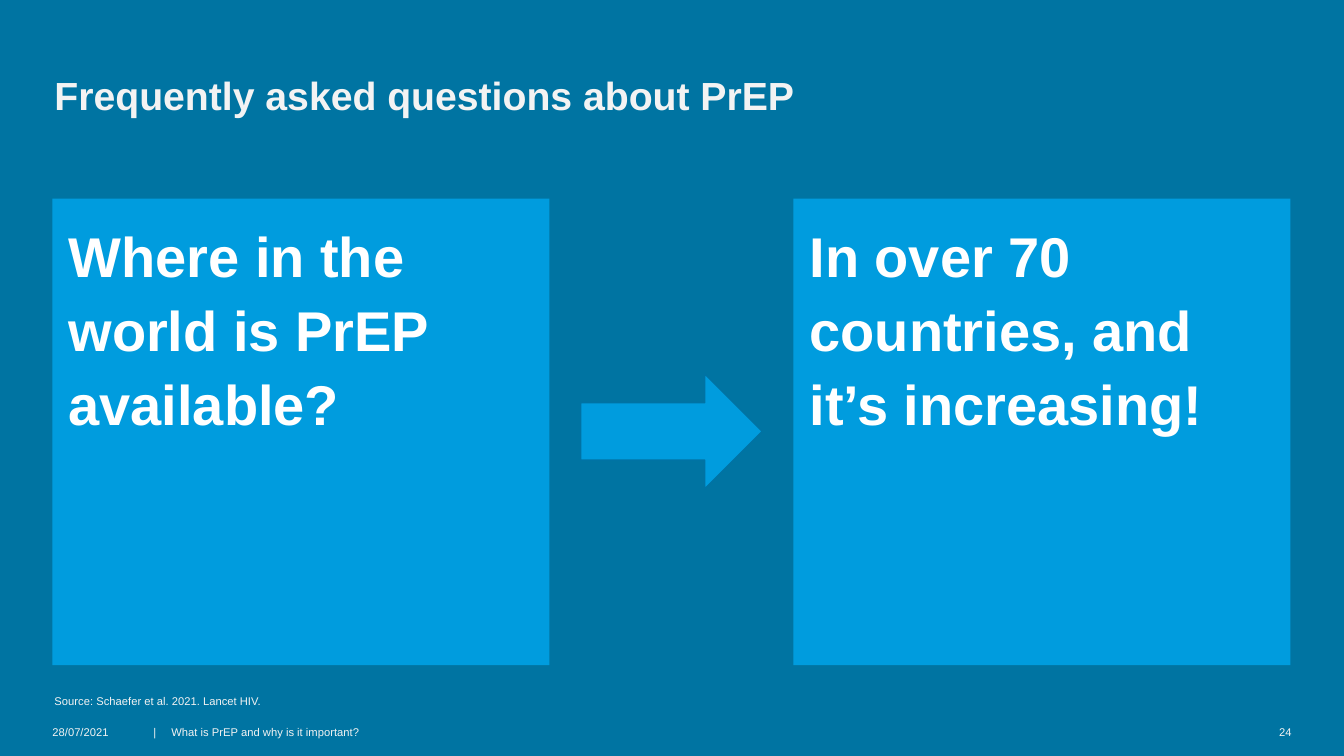
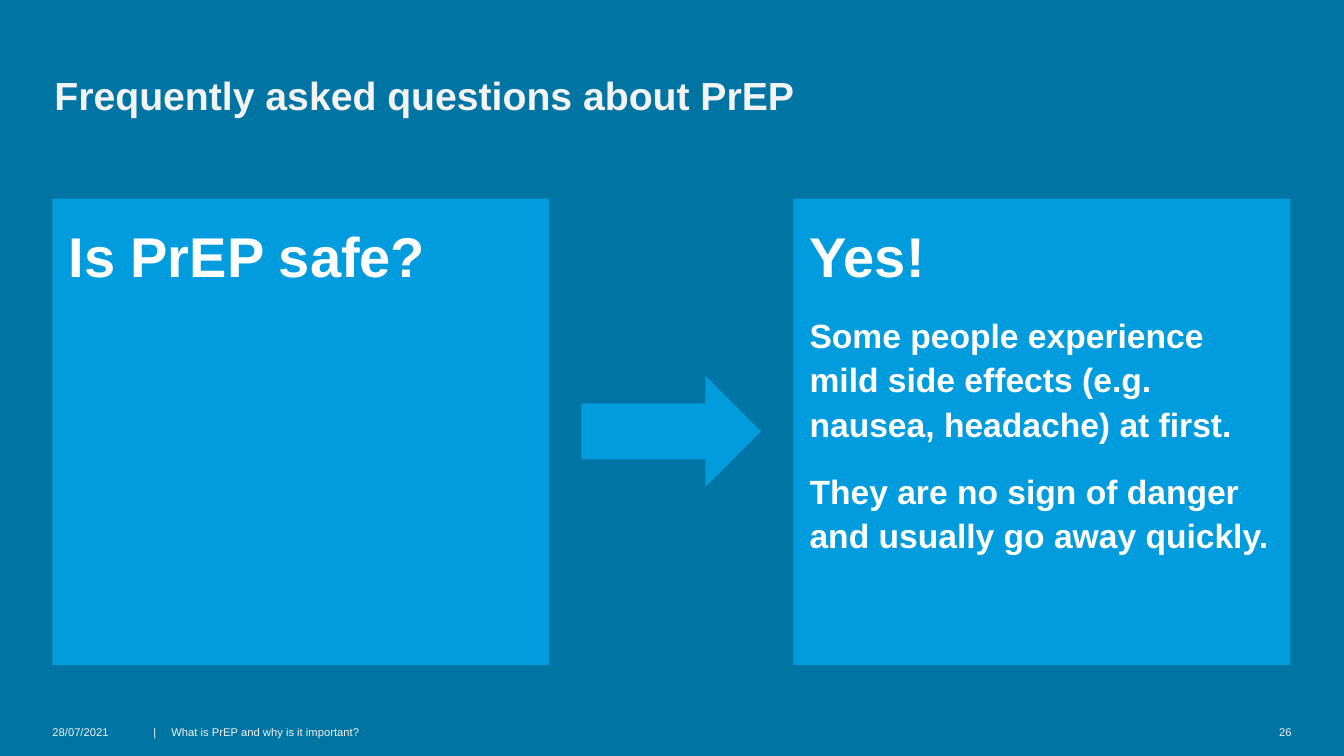
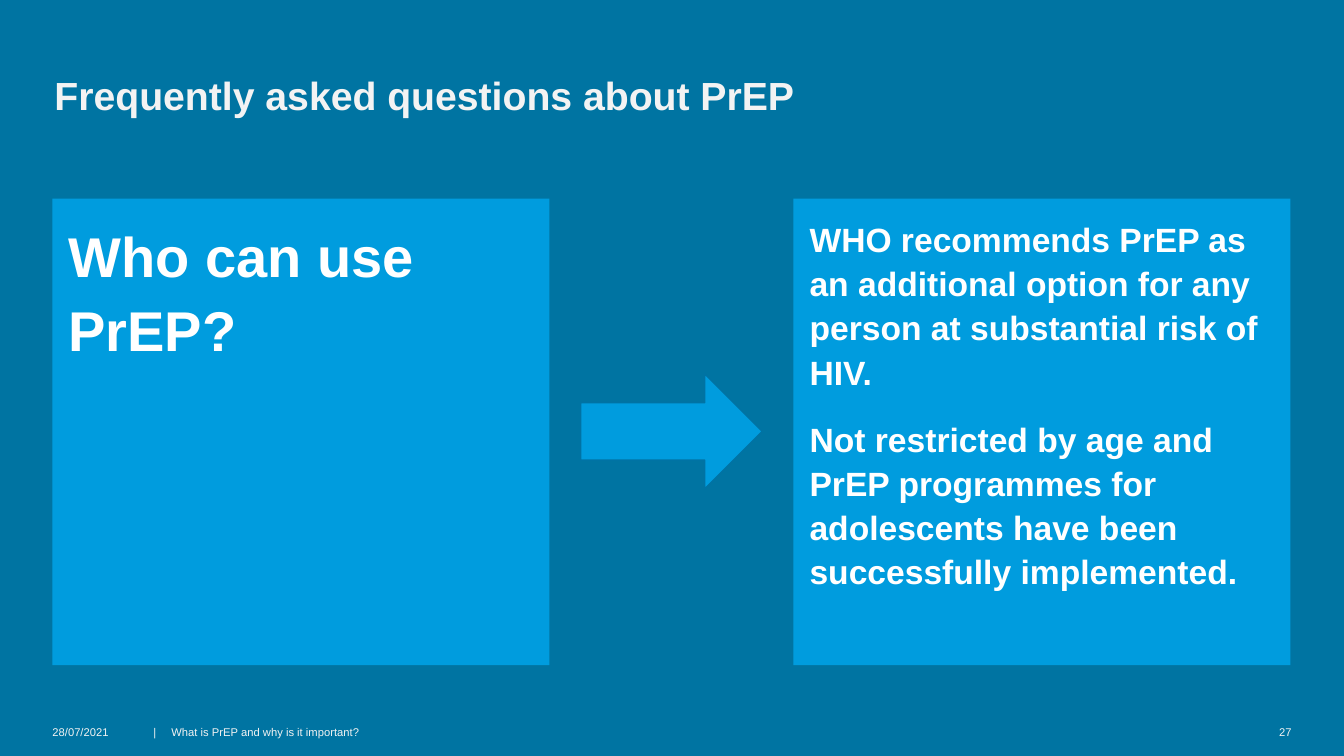
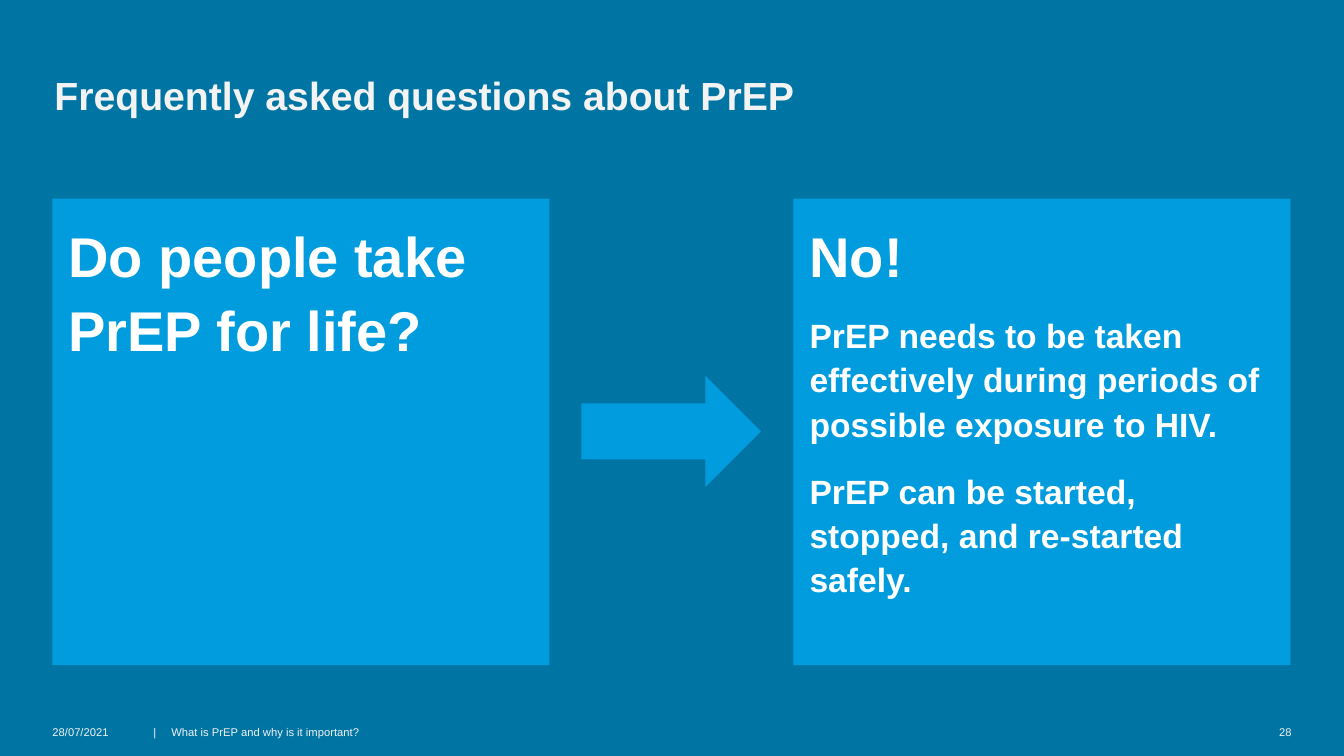
from dataclasses import dataclass
from typing import NamedTuple

from lxml import etree
from pptx import Presentation
from pptx.dml.color import RGBColor
from pptx.enum.shapes import MSO_SHAPE
from pptx.enum.text import MSO_ANCHOR, MSO_AUTO_SIZE, PP_ALIGN
from pptx.oxml.ns import qn
from pptx.util import Emu, Pt

RECT, ARROW = MSO_SHAPE.RECTANGLE, MSO_SHAPE.RIGHT_ARROW
TOP, BOTTOM = MSO_ANCHOR.TOP, MSO_ANCHOR.BOTTOM
LEFT, RIGHT = PP_ALIGN.LEFT, PP_ALIGN.RIGHT
NO_FIT = MSO_AUTO_SIZE.NONE
SCALE = 9144  # EMU in one px, 100 px to the inch


# Theme and geometry
@dataclass(frozen=True)
class Theme:
    font: str = "Arial"
    back: str = "0074A2"
    panel: str = "009CDE"
    edge: str = "0073A4"
    white: str = "FFFFFF"
    pale: str = "F3F3F3"
    title: int = 28
    big: int = 40
    mid: int = 24
    small: int = 8


class Box(NamedTuple):
    left: int
    top: int
    width: int
    height: int


class Line(NamedTuple):
    text: str
    size: int


@dataclass(frozen=True)
class Card:
    page: int
    ask: str
    reply: tuple[Line, ...]
    source: str = ""


THEME = Theme()
WIDTH, HEIGHT = 1333, 750
EDGE, SPAN, PAD = 52, 1228, 16
SIDE, GAP = 493, 31
ASK = Box(EDGE, 197, SIDE, 463)
REPLY = ASK._replace(left=EDGE + SPAN - SIDE)
POINT = Box(EDGE + SIDE + GAP, 371, SPAN - 2 * (SIDE + GAP), 114)
HEAD = Box(EDGE, 39, 892, 79)
SOURCE = Box(EDGE, 688, SPAN, 23)
DATE = Box(EDGE, 720, 86, 20)
TOPIC = DATE._replace(left=152, width=248)
PAGE = DATE._replace(left=1249, width=32)

# Wording
TITLE = "Frequently asked questions about PrEP"
CARDS = (
    Card(24, "Where in the world is PrEP available?",
         (Line("In over 70 countries, and it’s increasing!", THEME.big),),
         "Source: Schaefer et al. 2021. Lancet HIV."),
    Card(26, "Is PrEP safe?",
         (Line("Yes!", THEME.big),
          Line("Some people experience mild side effects (e.g. nausea, "
               "headache) at first.", THEME.mid),
          Line("They are no sign of danger and usually go away quickly.",
               THEME.mid))),
    Card(27, "Who can use PrEP?",
         (Line("WHO recommends PrEP as an additional option for any person "
               "at substantial risk of HIV.", THEME.mid),
          Line("Not restricted by age and PrEP programmes for adolescents "
               "have been successfully implemented.", THEME.mid))),
    Card(28, "Do people take PrEP for life?",
         (Line("No!", THEME.big),
          Line("PrEP needs to be taken effectively during periods of "
               "possible exposure to HIV.", THEME.mid),
          Line("PrEP can be started, stopped, and re-started safely.",
               THEME.mid))),
)


# Helpers
def px(count: int) -> Emu:
    return Emu(count * SCALE)


def place(box: Box) -> list[Emu]:
    return [px(side) for side in box]


def write(shape, lines: tuple[Line, ...], *, color: str = THEME.pale,
          bold: bool = False, align=LEFT, anchor=TOP,
          inset: tuple[int, int, int, int] = (0, 0, 0, 0),
          lead: float = 1.0, before: int = 0, after: int = 0,
          tab: int = 0) -> None:
    """Fill a shape with one paragraph for each line."""
    frame = shape.text_frame
    frame.word_wrap = True
    frame.auto_size = NO_FIT
    frame.vertical_anchor = anchor
    (frame.margin_left, frame.margin_top,
     frame.margin_right, frame.margin_bottom) = map(px, inset)
    for index, line in enumerate(lines):
        para = frame.add_paragraph() if index else frame.paragraphs[0]
        if tab:
            stops = etree.SubElement(para._p.get_or_add_pPr(), qn("a:tabLst"))
            etree.SubElement(stops, qn("a:tab"), pos=str(px(tab)), algn="l")
        para.alignment = align
        para.line_spacing = lead
        para.space_before = Pt(before if index else 0)
        para.space_after = Pt(after)
        run = para.add_run()
        run.text = line.text
        font = run.font
        font.name, font.size, font.bold = THEME.font, Pt(line.size), bold
        font.color.rgb = RGBColor.from_string(color)


def block(slide, kind, box: Box, edge: str = ""):
    shape = slide.shapes.add_shape(kind, *place(box))
    shape.shadow.inherit = False
    shape.fill.solid()
    shape.fill.fore_color.rgb = RGBColor.from_string(THEME.panel)
    if edge:
        shape.line.color.rgb = RGBColor.from_string(edge)
        shape.line.width = Pt(1)
    else:
        shape.line.fill.background()
    return shape


def panel(slide, box: Box, lines: tuple[Line, ...]) -> None:
    write(block(slide, RECT, box), lines, color=THEME.white, bold=True,
          inset=(PAD,) * 4, lead=1.1, before=10, after=6)


def label(slide, box: Box, text: str, **style) -> None:
    write(slide.shapes.add_textbox(*place(box)),
          (Line(text, THEME.small),), **style)


# Slide parts
def header(slide) -> None:
    title = slide.shapes.title
    title.left, title.top, title.width, title.height = place(HEAD)
    write(title, (Line(TITLE, THEME.title),), bold=True, anchor=BOTTOM,
          inset=(2, 0, 39, 0), lead=0.9)


def footer(slide, page: int) -> None:
    label(slide, DATE, "28/07/2021")
    label(slide, TOPIC, "|\tWhat is PrEP and why is it important?", tab=18)
    label(slide, PAGE, str(page), align=RIGHT)


def draw(slide, card: Card) -> None:
    header(slide)
    panel(slide, REPLY, card.reply)
    footer(slide, card.page)
    if card.source:
        label(slide, SOURCE, card.source, inset=(2, 0, 2, 0), lead=1.1)
    panel(slide, ASK, (Line(card.ask, THEME.big),))
    block(slide, ARROW, POINT, THEME.edge)


def main() -> None:
    deck = Presentation()
    deck.slide_width, deck.slide_height = px(WIDTH), px(HEIGHT)
    back = deck.slide_master.background.fill
    back.solid()
    back.fore_color.rgb = RGBColor.from_string(THEME.back)
    layout = deck.slide_layouts.get_by_name("Title Only")
    for card in CARDS:
        draw(deck.slides.add_slide(layout), card)
    deck.save("out.pptx")


if __name__ == "__main__":
    main()
